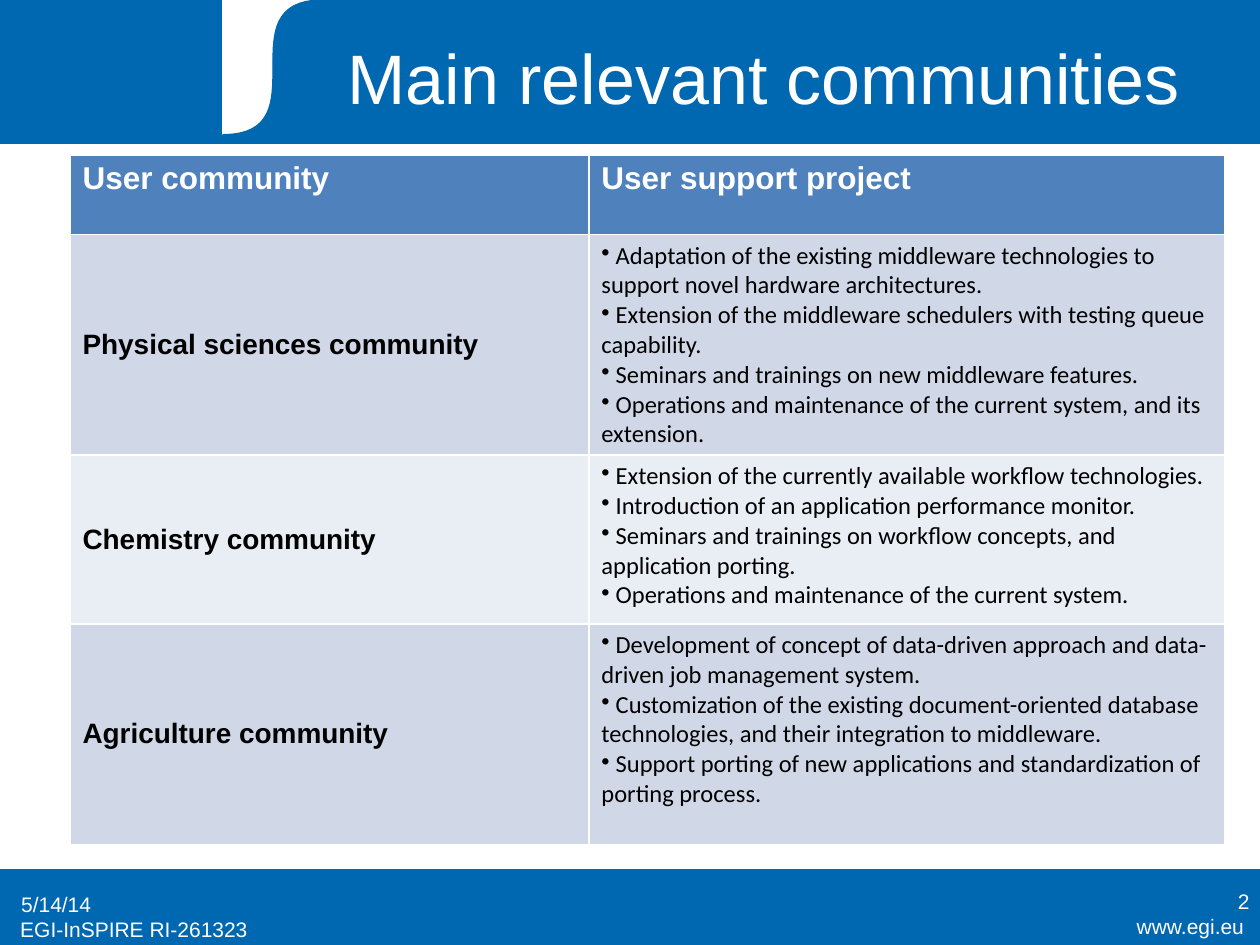
from lxml.etree import SubElement
from pptx import Presentation
from pptx.dml.color import RGBColor
from pptx.enum.shapes import MSO_SHAPE
from pptx.enum.text import MSO_ANCHOR, PP_ALIGN
from pptx.oxml.ns import qn
from pptx.util import Pt

BLUE, WHITE, BLACK = "0067B1", "FFFFFF", "000000"
HEAD, DARK, LIGHT = "4F81BD", "D0D8E8", "E9EDF4"
TITLES = ["User community", "User support project"]
ROWS = [
    ("Physical sciences community", DARK, 126, [
        "Adaptation of the existing middleware technologies to support novel hardware architectures.",
        "Extension of the middleware schedulers with testing queue capability.",
        "Seminars and trainings on new middleware features.",
        "Operations and maintenance of the current system, and its extension."]),
    ("Chemistry community", LIGHT, 96.5, [
        "Extension of the currently available workflow technologies.",
        "Introduction of an application performance monitor.",
        "Seminars and trainings on workflow concepts, and application porting.",
        "Operations and maintenance of the current system."]),
    ("Agriculture community", DARK, 126, [
        "Development of concept of data-driven approach and data-driven job management system.",
        "Customization of the existing document-oriented database technologies, and their integration to middleware.",
        "Support porting of new applications and standardization of porting process."]),
]


def color(code):
    return RGBColor.from_string(code)


def paint(shape, code):
    shape.shadow.inherit = False
    shape.fill.solid()
    shape.fill.fore_color.rgb = color(code)
    shape.line.color.rgb = color(code)
    shape.line.width = Pt(0.75)


def style(para, size, code, name="Arial", bold=False):
    font = para.font
    font.size, font.name, font.bold = Pt(size), name, bold
    font.color.rgb = color(code)


def add_rect(slide, box, code):
    paint(slide.shapes.add_shape(MSO_SHAPE.RECTANGLE, *map(Pt, box)), code)


def add_curve(slide, left, mid, right, base, steps=32):
    points = [(right, base), (left, base)]
    for step in range(1, steps + 1):
        t = step / steps
        u = 1 - t
        x = left * (u**3 + 3 * u * t**2) + mid * (3 * u**2 * t + t**3)
        y = base * (u**3 + 3 * u**2 * t)
        points.append((x, y))
    build = slide.shapes.build_freeform(Pt(right), 0, scale=1.0)
    build.add_line_segments([(Pt(x), Pt(y)) for x, y in points], close=True)
    paint(build.convert_to_shape(), BLUE)


def add_text(slide, box, text, size, align=PP_ALIGN.LEFT, anchor=MSO_ANCHOR.MIDDLE):
    frame = slide.shapes.add_textbox(*map(Pt, box)).text_frame
    frame.word_wrap = True
    frame.vertical_anchor = anchor
    para = frame.paragraphs[0]
    para.text, para.alignment = text, align
    style(para, size, WHITE)


def fill_cell(cell, text, size, code, back, anchor):
    cell.fill.solid()
    cell.fill.fore_color.rgb = color(back)
    cell.vertical_anchor = anchor
    para = cell.text_frame.paragraphs[0]
    para.text = text
    style(para, size, code, bold=True)


def fill_list(cell, items, back):
    cell.fill.solid()
    cell.fill.fore_color.rgb = color(back)
    frame = cell.text_frame
    for i, item in enumerate(items):
        para = frame.add_paragraph() if i else frame.paragraphs[0]
        para.text = " " + item
        SubElement(para._p.get_or_add_pPr(), qn("a:buChar"), char="•")
        style(para, 14, BLACK, "Calibri")


def add_grid(slide):
    tall = [45.5] + [row[2] for row in ROWS]
    wide = [296.5, 363.5]
    frame = slide.shapes.add_table(
        len(tall), len(wide), Pt(40), Pt(88.5), Pt(sum(wide)), Pt(sum(tall)))
    table = frame.table
    table.horz_banding = False
    for row, size in zip(table.rows, tall):
        row.height = Pt(size)
    for col, size in zip(table.columns, wide):
        col.width = Pt(size)
    for j, text in enumerate(TITLES):
        fill_cell(table.cell(0, j), text, 18, WHITE, HEAD, MSO_ANCHOR.TOP)
    for i, (name, back, _, items) in enumerate(ROWS, 1):
        fill_cell(table.cell(i, 0), name, 16, BLACK, back, MSO_ANCHOR.MIDDLE)
        fill_list(table.cell(i, 1), items, back)


def main():
    deck = Presentation()
    deck.slide_width, deck.slide_height = Pt(720), Pt(540)
    slide = deck.slides.add_slide(deck.slide_layouts[6])
    add_rect(slide, (0, 497, 720, 43), BLUE)
    add_rect(slide, (0, 0, 720, 82), BLUE)
    add_rect(slide, (127.5, 0, 142, 77), WHITE)
    add_curve(slide, 127.5, 184.5, 269.5, 77)
    right, top = PP_ALIGN.RIGHT, MSO_ANCHOR.TOP
    add_text(slide, (604, 518.5, 114, 22), "www.egi.eu", 12, right, top)
    add_text(slide, (4.5, 520, 180, 22), "EGI-InSPIRE RI-261323", 12, anchor=top)
    add_text(slide, (167, 9.5, 538.5, 68.5), "Main relevant communities", 40, PP_ALIGN.CENTER)
    add_text(slide, (5, 502, 168, 29), "5/14/14", 12)
    add_text(slide, (553, 500.5, 168, 29), "2", 12, right)
    add_grid(slide)
    deck.save("out.pptx")


if __name__ == "__main__":
    main()
